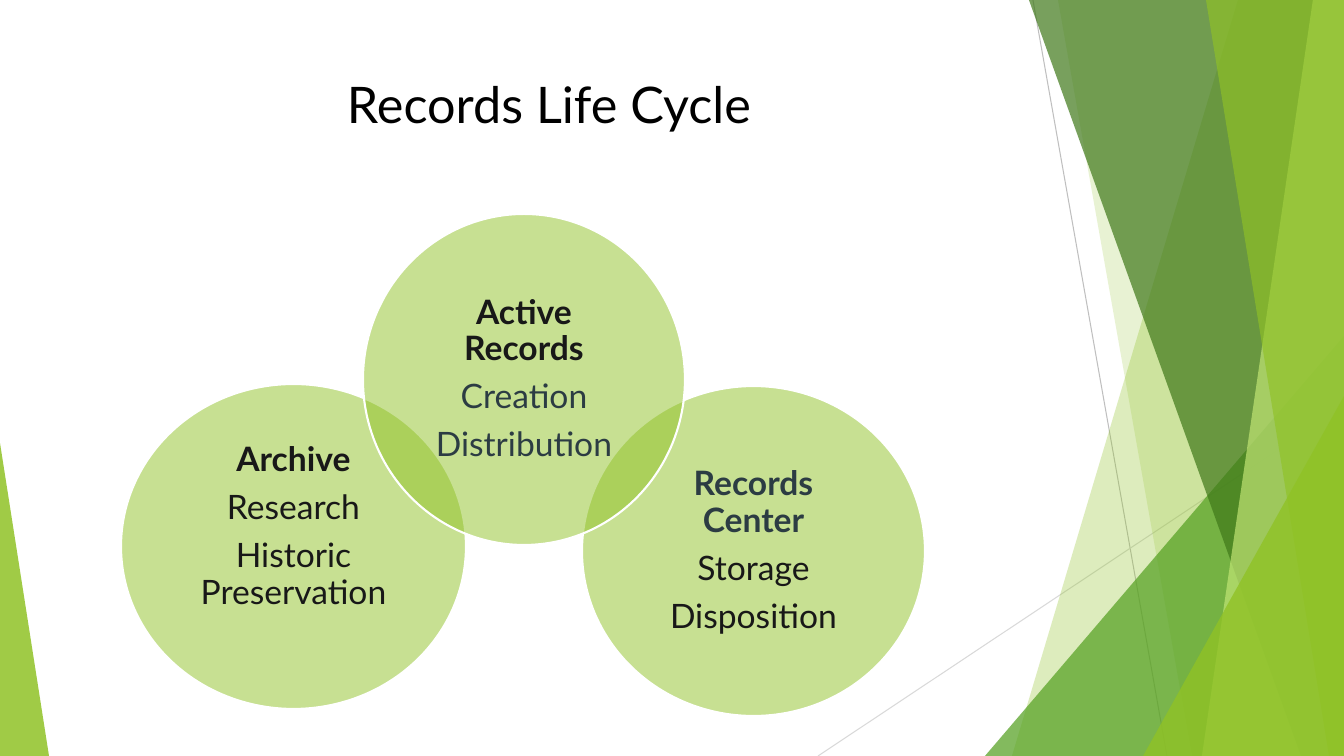
from lxml import etree
from pptx import Presentation
from pptx.dml.color import RGBColor
from pptx.enum.shapes import MSO_CONNECTOR, MSO_SHAPE
from pptx.enum.text import MSO_ANCHOR, PP_ALIGN
from pptx.oxml.ns import qn
from pptx.util import Pt

WIDTH, HEIGHT = 1344, 756
SCALE = 914400 / 100.8  # EMU in one px
FONT = "Lato"
GREEN, INK, SLATE = "90C226", "181818", "2C3C43"

TITLE = "Records Life Cycle"
TITLE_BOX = (75, 68, 948, 145)

# start, end, colour
RAYS = [
    ((1033, 0), (1167, HEIGHT), "BFBFBF"),
    ((WIDTH, 406), (818, HEIGHT), "D9D9D9"),
]
# Decoration from back to front:
# bands are (top x, bottom x), triangles are (box, apex position)
DECORATION = [
    ("band", (1238, 1012), GREEN, 30),
    ("band", (1058, 1192), GREEN, 20),
    ("triangle", ((985, 336, 359, 420), 1), "54A021", 72),
    ("band", (1029, 1301), "3F7819", 70),
    ("band", (1313, 1202), "C0E474", 70),
    ("band", (1206, 1329), GREEN, 65),
    ("triangle", ((1143, 396, 201, 360), 1), GREEN, 80),
    ("triangle", ((0, 443, 49, 313), 0), GREEN, 85),
]
# box, bottom inset, (text, colour) with the heading first
STAGES = [
    ((121, 384, 345, 325), 49,
     [("Archive", INK), ("Research", INK), ("Historic Preservation", INK)]),
    ((582, 386, 343, 330), 10,
     [("Records Center", SLATE), ("Storage", INK), ("Disposition", INK)]),
    ((363, 214, 322, 331), 10,
     [("Active Records", INK), ("Creation", SLATE), ("Distribution", SLATE)]),
]


def px(value):
    return round(value * SCALE)


def color(value):
    return RGBColor.from_string(value)


def paint(shape, fill, opacity):
    shape.shadow.inherit = False
    shape.fill.solid()
    shape.fill.fore_color.rgb = color(fill)
    srgb = shape.fill._xPr.find(".//" + qn("a:srgbClr"))
    etree.SubElement(srgb, qn("a:alpha"), val=str(opacity * 1000))
    shape.line.fill.background()


def write(paragraph, text, size, ink, bold=False):
    paragraph.text = text
    paragraph.alignment = PP_ALIGN.CENTER
    font = paragraph.font
    font.name, font.size, font.bold = FONT, Pt(size), bold
    font.color.rgb = color(ink)


presentation = Presentation()
presentation.slide_width, presentation.slide_height = px(WIDTH), px(HEIGHT)
slide = presentation.slides.add_slide(presentation.slide_layouts[6])
shapes = slide.shapes

# Thin rays
for start, end, ink in RAYS:
    ray = shapes.add_connector(MSO_CONNECTOR.STRAIGHT, *map(px, start + end))
    ray.line.color.rgb = color(ink)
    ray.line.width = Pt(0.75)
    etree.SubElement(ray._element.spPr, qn("a:effectLst"))

# Translucent bands and triangles
for kind, geometry, fill, opacity in DECORATION:
    if kind == "band":
        top_x, bottom_x = geometry
        builder = shapes.build_freeform(top_x, 0, SCALE)
        builder.add_line_segments([(WIDTH, 0), (WIDTH, HEIGHT), (bottom_x, HEIGHT)])
        facet = builder.convert_to_shape()
    else:
        box, apex = geometry
        facet = shapes.add_shape(MSO_SHAPE.ISOSCELES_TRIANGLE, *map(px, box))
        facet.adjustments[0] = apex
    paint(facet, fill, opacity)

# Title
title_frame = shapes.add_textbox(*map(px, TITLE_BOX)).text_frame
title_frame.word_wrap = True
write(title_frame.paragraphs[0], TITLE, 36, "000000")

# Overlapping life cycle circles
for box, bottom_inset, lines in STAGES:
    circle = shapes.add_shape(MSO_SHAPE.OVAL, *map(px, box))
    paint(circle, GREEN, 50)
    circle.line.color.rgb = color("FFFFFF")
    circle.line.width = Pt(1.5)
    frame = circle.text_frame
    frame.word_wrap = True
    frame.vertical_anchor = MSO_ANCHOR.MIDDLE
    frame.margin_left = frame.margin_right = frame.margin_top = px(10)
    frame.margin_bottom = px(bottom_inset)
    for index, (text, ink) in enumerate(lines):
        paragraph = frame.add_paragraph() if index else frame.paragraphs[0]
        write(paragraph, text, 24, ink, bold=index == 0)
        paragraph.line_spacing = 0.9
        paragraph.space_after = Pt(8.4)

presentation.save("out.pptx")
